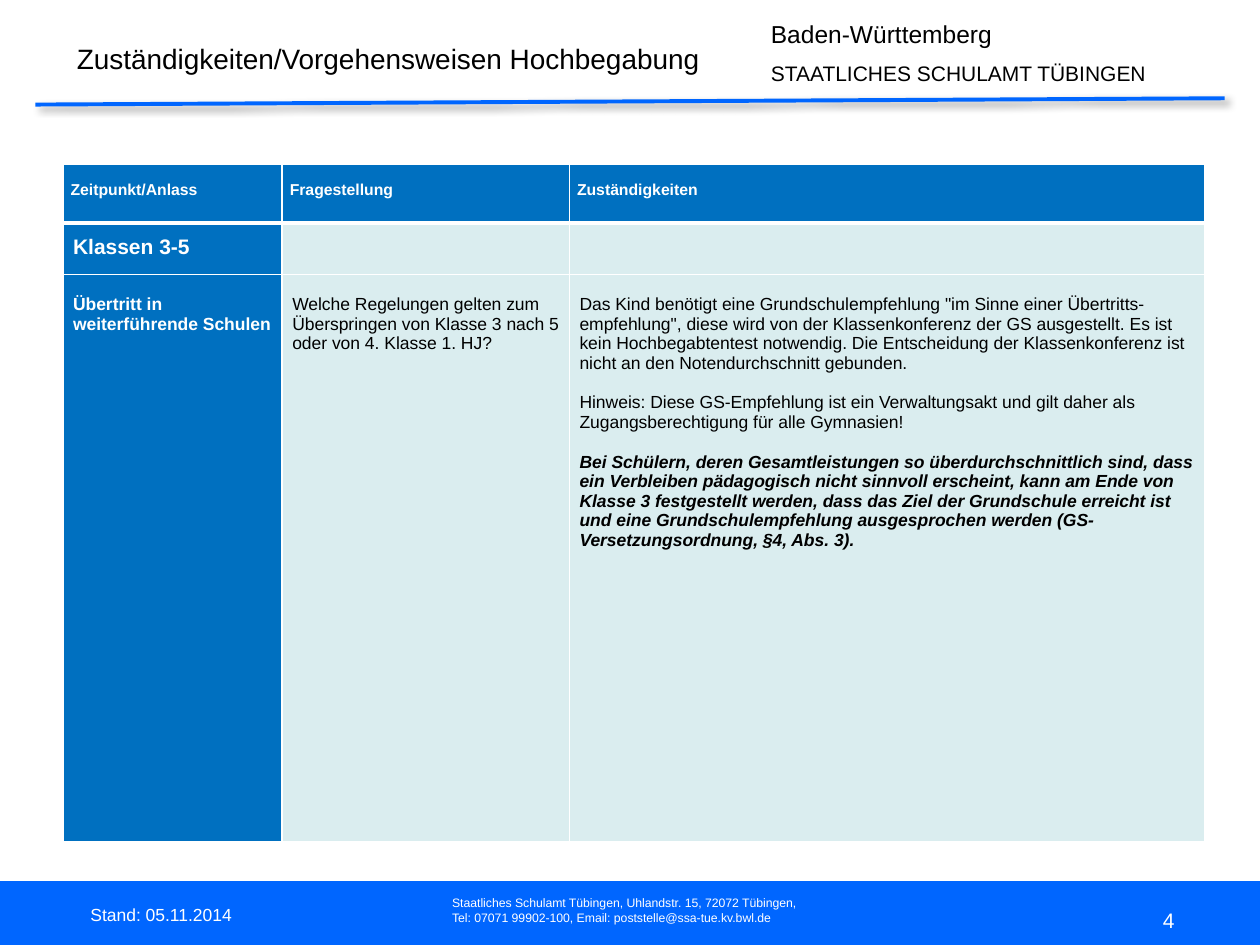
from lxml.etree import SubElement
from pptx import Presentation
from pptx.dml.color import RGBColor
from pptx.enum.shapes import MSO_CONNECTOR, MSO_SHAPE
from pptx.enum.text import MSO_ANCHOR, MSO_AUTO_SIZE, PP_ALIGN
from pptx.oxml import parse_xml
from pptx.oxml.ns import qn
from pptx.util import Inches, Pt

COLORS = {"bar": "0066FF", "head": "0070C0", "body": "DAEDEF",
          "white": "FFFFFF", "black": "000000"}
FONT = "Arial"
COLS = [1.74, 2.28, 5.04]
ROWS = [0.47, 0.41, 4.5]
INSETS = [(0.06, 0.14), (0.08, 0.1), (0.08, 0.16)]  # side and top, per row
SIZES = [9, 12, 10]
CELLS = [
    [["Zeitpunkt/Anlass"], ["Fragestellung"], ["Zuständigkeiten"]],
    [["Klassen 3-5"], [], []],
    [["Übertritt in weiterführende Schulen"],
     ["Welche Regelungen gelten zum Überspringen von Klasse 3 nach 5 "
      "oder von 4. Klasse 1. HJ?"],
     ["Das Kind benötigt eine Grundschulempfehlung \"im Sinne einer "
      "Übertritts-empfehlung\", diese wird von der Klassenkonferenz der GS "
      "ausgestellt. Es ist kein Hochbegabtentest notwendig. Die Entscheidung "
      "der Klassenkonferenz ist nicht an den Notendurchschnitt gebunden.",
      "Hinweis: Diese GS-Empfehlung ist ein Verwaltungsakt und gilt daher "
      "als Zugangsberechtigung für alle Gymnasien!",
      "Bei Schülern, deren Gesamtleistungen so überdurchschnittlich sind, "
      "dass ein Verbleiben pädagogisch nicht sinnvoll erscheint, kann am Ende "
      "von Klasse 3 festgestellt werden, dass das Ziel der Grundschule "
      "erreicht ist und eine Grundschulempfehlung ausgesprochen werden "
      "(GS-Versetzungsordnung, §4, Abs. 3)."]],
]


def rgb(name):
    return RGBColor.from_string(COLORS[name])


def style(para, size, color, bold=False, italic=False):
    for run in para.runs:
        font = run.font
        font.name, font.size = FONT, Pt(size)
        font.bold, font.italic = bold, italic
        font.color.rgb = rgb(color)


def fill_text(frame, lines, color, anchor=MSO_ANCHOR.TOP,
              align=PP_ALIGN.LEFT, gap=0):
    """Write (text, size) lines into a text frame."""
    frame.word_wrap = True
    frame.auto_size = MSO_AUTO_SIZE.NONE
    frame.vertical_anchor = anchor
    frame.text = "\n".join(text for text, _ in lines)
    for i, (para, (_, size)) in enumerate(zip(frame.paragraphs, lines)):
        para.alignment = align
        para.space_before = Pt(gap if i else 0)
        style(para, size, color)


def add_text(slide, box, lines, color, **look):
    shape = slide.shapes.add_textbox(*map(Inches, box))
    fill_text(shape.text_frame, lines, color, **look)


def add_title(slide, box, text):
    title = slide.shapes.title
    title.left, title.top, title.width, title.height = map(Inches, box)
    fill_text(title.text_frame, [(text, 16)], "black")


def add_bar(slide, box):
    bar = slide.shapes.add_shape(MSO_SHAPE.RECTANGLE, *map(Inches, box))
    bar.shadow.inherit = False
    bar.fill.solid()
    bar.fill.fore_color.rgb = rgb("bar")
    bar.line.color.rgb = rgb("bar")
    bar.line.width = Pt(2)


def add_rule(slide, ends):
    """Draw the header rule with a soft shadow."""
    rule = slide.shapes.add_connector(MSO_CONNECTOR.STRAIGHT,
                                      *map(Inches, ends))
    rule.line.color.rgb = rgb("bar")
    rule.line.width = Pt(2.25)
    rule._element.spPr.append(parse_xml(
        '<a:effectLst xmlns:a='
        '"http://schemas.openxmlformats.org/drawingml/2006/main">'
        f'<a:outerShdw blurRad="{Pt(4)}" dist="{Pt(3)}" dir="2700000">'
        f'<a:srgbClr val="{COLORS["black"]}"><a:alpha val="40000"/>'
        '</a:srgbClr></a:outerShdw></a:effectLst>'))


def set_edges(cell, top, bottom):
    """Put white borders before the fill, as the schema asks."""
    props = cell._tc.get_or_add_tcPr()
    widths = {"L": 1, "R": 1, "T": top, "B": bottom}
    for i, (side, width) in enumerate(widths.items()):
        edge = SubElement(props, qn(f"a:ln{side}"), w=str(Pt(width)))
        props.insert(i, edge)
        solid = SubElement(edge, qn("a:solidFill"))
        SubElement(solid, qn("a:srgbClr"), val=COLORS["white"])


def fill_cell(cell, row, col, texts):
    head = row == 0 or col == 0
    side, top = INSETS[row]
    if texts:
        cell.margin_left = cell.margin_right = Inches(side)
        cell.margin_top, cell.margin_bottom = Inches(top), 0
        cell.text = "\n".join(texts)
        for i, para in enumerate(cell.text_frame.paragraphs):
            last = i == 2  # the closing rule stands out
            para.space_before = Pt(11.5 if i else 0)
            style(para, SIZES[row], "white" if head else "black",
                  bold=head or last, italic=last)
    cell.fill.solid()
    cell.fill.fore_color.rgb = rgb("head" if head else "body")
    set_edges(cell, 3 if row == 1 else 1, 3 if row == 0 else 1)


def add_grid(slide, left, top):
    table = slide.shapes.add_table(
        len(ROWS), len(COLS), Inches(left), Inches(top),
        Inches(sum(COLS)), Inches(sum(ROWS))).table
    for col, width in zip(table.columns, COLS):
        col.width = Inches(width)
    for row, height in zip(table.rows, ROWS):
        row.height = Inches(height)
    for r, line in enumerate(CELLS):
        for c, texts in enumerate(line):
            fill_cell(table.cell(r, c), r, c, texts)


def main():
    deck = Presentation()
    deck.slide_width, deck.slide_height = Inches(10), Inches(7.5)
    slide = deck.slides.add_slide(deck.slide_layouts[5])

    # Header
    add_title(slide, (0.51, 0.28, 5.43, 0.39),
              "Zuständigkeiten/Vorgehensweisen Hochbegabung")
    add_text(slide, (6.02, 0.1, 3.26, 0.64),
             [("Baden-Württemberg", 14),
              ("STAATLICHES SCHULAMT TÜBINGEN", 12)], "black", gap=7)
    add_rule(slide, (0.28, 0.83, 9.72, 0.78))

    # Table
    add_grid(slide, 0.5, 1.3)

    # Footer
    add_bar(slide, (0, 7.01, 10, 0.49))
    add_text(slide, (3.49, 7.06, 2.97, 0.34),
             [("Staatliches Schulamt Tübingen, Uhlandstr. 15, 72072 Tübingen, "
               "\vTel: 07071 99902-100, Email: poststelle@ssa-tue.kv.bwl.de",
               7)], "white")
    add_text(slide, (0.62, 7.06, 2.33, 0.4), [("Stand: 05.11.2014", 10)],
             "white", anchor=MSO_ANCHOR.MIDDLE)
    add_text(slide, (7.09, 7.1, 2.33, 0.4), [("4", 12)], "white",
             anchor=MSO_ANCHOR.MIDDLE, align=PP_ALIGN.RIGHT)

    deck.save("out.pptx")


if __name__ == "__main__":
    main()
